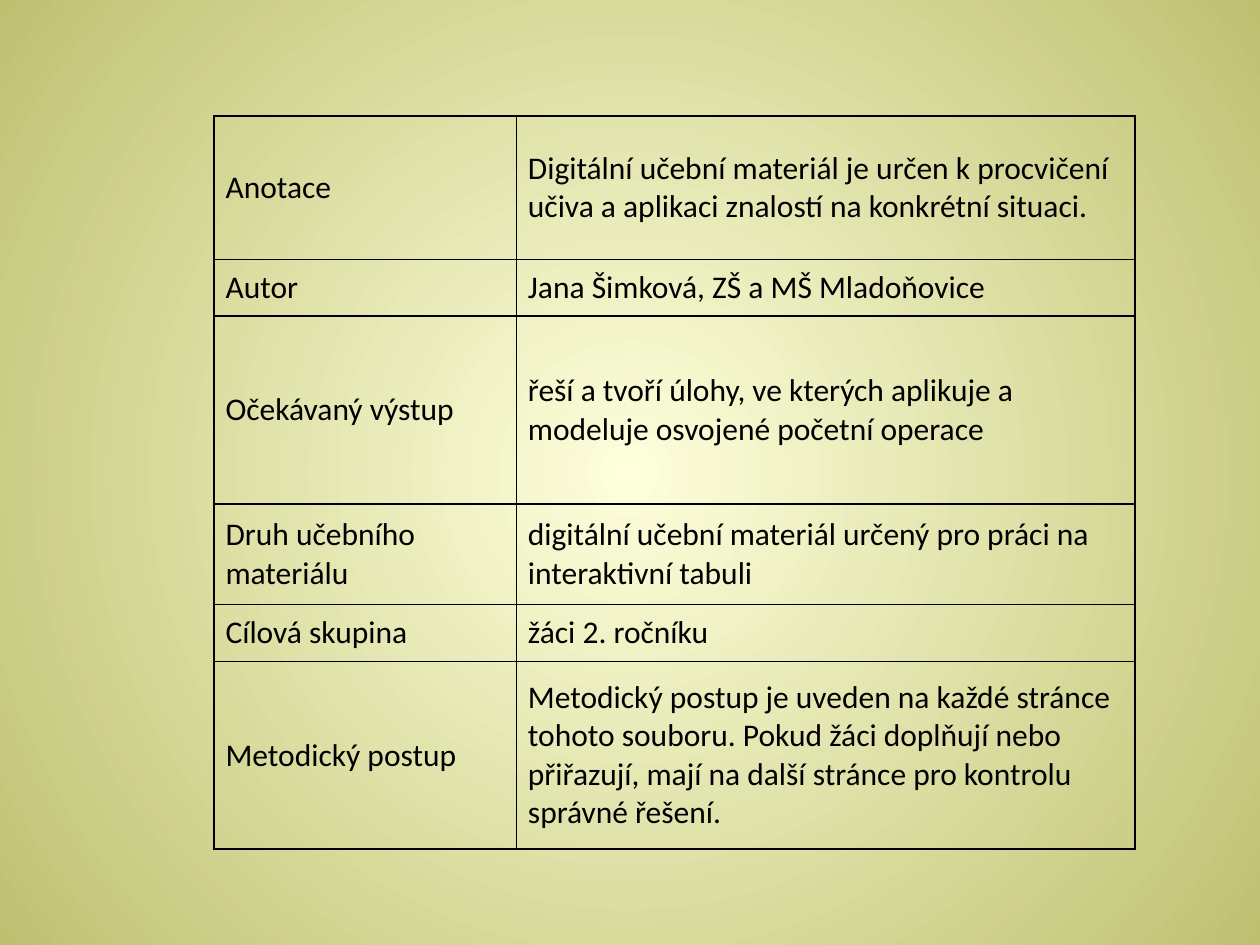
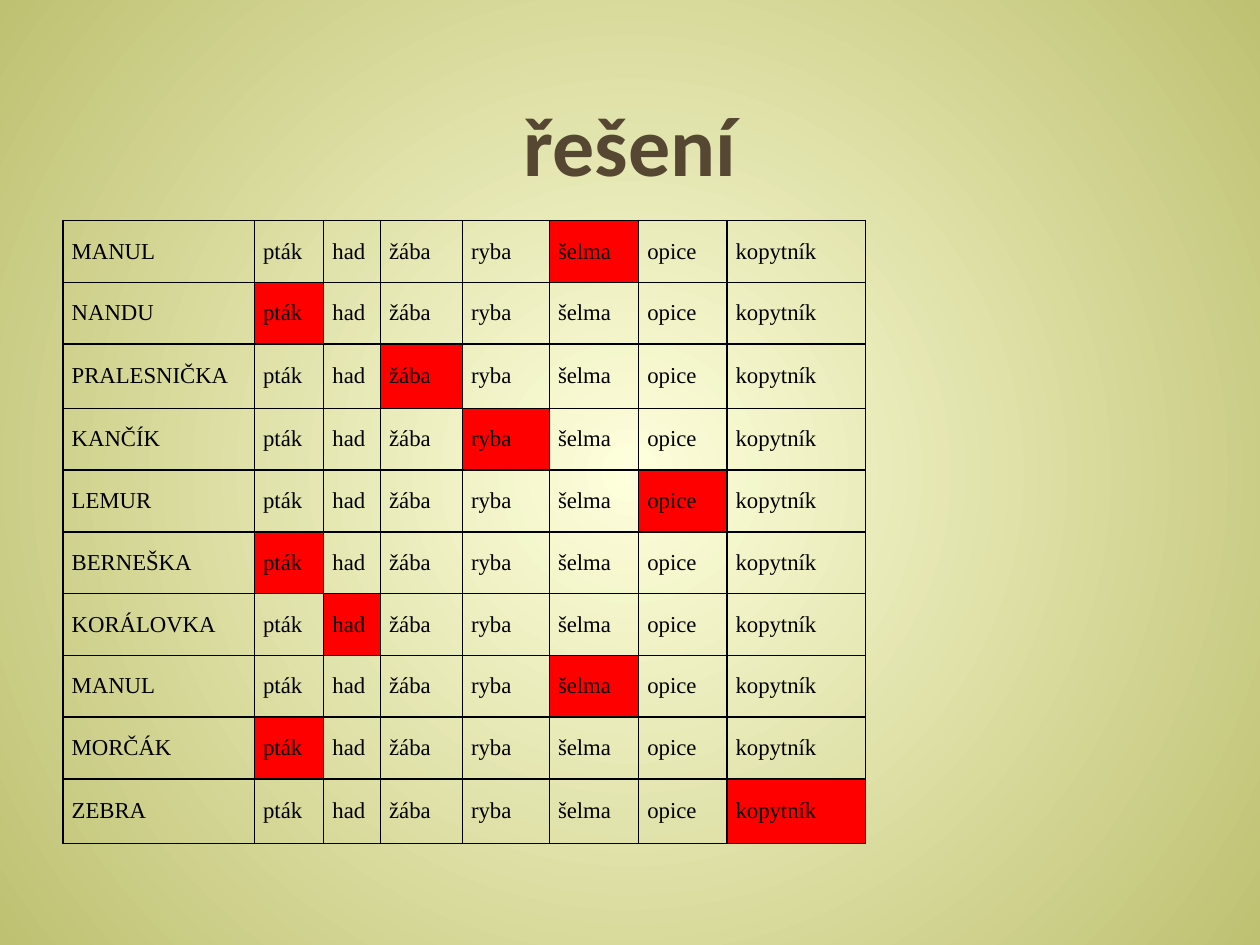
from dataclasses import dataclass

from lxml import etree
from pptx import Presentation
from pptx.dml.color import RGBColor
from pptx.enum.text import MSO_ANCHOR, PP_ALIGN
from pptx.oxml.ns import qn
from pptx.presentation import Presentation as Deck
from pptx.slide import Slide
from pptx.table import _Cell
from pptx.util import Pt

MIDDLE = MSO_ANCHOR.MIDDLE
BOTTOM = MSO_ANCHOR.BOTTOM
CENTER = PP_ALIGN.CENTER

COLORS = {
    "glow": "FEFFDC",
    "edge": "BEC171",
    "title": "564732",
    "text": "000000",
    "border": "000000",
    "answer": "FF0000",
}
TITLE_FONT = "Calibri"
BLANK_LAYOUT = 6
BORDER_WIDTH = Pt(1)


@dataclass(frozen=True)
class Grid:
    """A bordered table; lengths are in points, answers are (row, column) pairs."""
    left: float
    top: float
    columns: list[float]
    rows: list[float]
    texts: list[list[str]]
    font: str
    size: float
    side_margin: float
    end_margin: float
    answers: frozenset[tuple[int, int]] = frozenset()


ABOUT = [
    ["Anotace", "Digitální učební materiál je určen k procvičení "
                "učiva a aplikaci znalostí na konkrétní situaci."],
    ["Autor", "Jana Šimková, ZŠ a MŠ Mladoňovice"],
    ["Očekávaný výstup", "řeší a tvoří úlohy, ve kterých aplikuje a "
                         "modeluje osvojené početní operace"],
    ["Druh učebního materiálu", "digitální učební materiál určený pro práci na "
                                "interaktivní tabuli"],
    ["Cílová skupina", "žáci 2. ročníku"],
    ["Metodický postup", "Metodický postup je uveden na každé stránce tohoto "
                         "souboru. Pokud žáci doplňují nebo přiřazují, mají na "
                         "další stránce pro kontrolu správné řešení."],
]
GROUPS = ["pták", "had", "žába", "ryba", "šelma", "opice", "kopytník"]
ANIMALS = [
    ("MANUL", "šelma"), ("NANDU", "pták"), ("PRALESNIČKA", "žába"),
    ("KANČÍK", "ryba"), ("LEMUR", "opice"), ("BERNEŠKA", "pták"),
    ("KORÁLOVKA", "had"), ("MANUL", "šelma"), ("MORČÁK", "pták"),
    ("ZEBRA", "kopytník"),
]

ABOUT_GRID = Grid(
    left=122.4, top=66.2,
    columns=[172.8, 353.5],
    rows=[82.1, 32.4, 107.3, 57.6, 32.4, 107.3],
    texts=ABOUT, font="Calibri", size=18, side_margin=6.5, end_margin=3,
)
SOLUTION_GRID = Grid(
    left=36, top=126,
    columns=[109.4, 39.6, 32.4, 46.8, 49.7, 51.1, 50.4, 79.2],
    rows=[36.8 if name in ("PRALESNIČKA", "ZEBRA") else 35.3 for name, _ in ANIMALS],
    texts=[[name, *GROUPS] for name, _ in ANIMALS],
    font="Times New Roman", size=13, side_margin=5, end_margin=0,
    answers=frozenset((row, GROUPS.index(group) + 1)
                      for row, (_, group) in enumerate(ANIMALS)),
)


def rgb(name: str) -> RGBColor:
    return RGBColor.from_string(COLORS[name])


def set_background(deck: Deck) -> None:
    """Give the master a round gradient that all slides inherit."""
    master = deck.slide_master
    fill = master.background.fill
    fill.gradient()
    for stop, name in zip(fill.gradient_stops, ("glow", "edge")):
        stop.color.rgb = rgb(name)
    gradient = master.element.find(".//" + qn("a:gradFill"))
    linear = gradient.find(qn("a:lin"))
    circle = etree.Element(qn("a:path"), {"path": "circle"})
    etree.SubElement(circle, qn("a:fillToRect"), dict.fromkeys("ltrb", "50000"))
    gradient.replace(linear, circle)


def add_borders(cell: _Cell) -> None:
    properties = cell._tc.get_or_add_tcPr()
    for index, side in enumerate("LRTB"):
        line = etree.Element(qn(f"a:ln{side}"), {"w": str(BORDER_WIDTH)})
        solid = etree.SubElement(line, qn("a:solidFill"))
        etree.SubElement(solid, qn("a:srgbClr"), {"val": COLORS["border"]})
        properties.insert(index, line)


def fill_cell(cell: _Cell, text: str, grid: Grid, is_answer: bool) -> None:
    add_borders(cell)
    if is_answer:
        cell.fill.solid()
        cell.fill.fore_color.rgb = rgb("answer")
    else:
        cell.fill.background()
    cell.vertical_anchor = MIDDLE
    cell.margin_left = cell.margin_right = Pt(grid.side_margin)
    cell.margin_top = cell.margin_bottom = Pt(grid.end_margin)
    cell.text = text
    font = cell.text_frame.paragraphs[0].font
    font.name, font.size = grid.font, Pt(grid.size)
    font.color.rgb = rgb("text")


def add_grid(page: Slide, grid: Grid) -> None:
    table = page.shapes.add_table(
        len(grid.rows), len(grid.columns), Pt(grid.left), Pt(grid.top),
        Pt(sum(grid.columns)), Pt(sum(grid.rows))).table
    table.first_row = table.horz_banding = False
    for column, width in zip(table.columns, grid.columns):
        column.width = Pt(width)
    for row, height in zip(table.rows, grid.rows):
        row.height = Pt(height)
    for row, texts in enumerate(grid.texts):
        for column, text in enumerate(texts):
            fill_cell(table.cell(row, column), text, grid, (row, column) in grid.answers)


def add_title(page: Slide, text: str) -> None:
    box = page.shapes.add_textbox(Pt(36), Pt(23.8), Pt(648), Pt(90))
    frame = box.text_frame
    frame.word_wrap = True
    frame.vertical_anchor = BOTTOM
    para = frame.paragraphs[0]
    para.text = text
    para.alignment = CENTER
    para.font.name, para.font.size, para.font.bold = TITLE_FONT, Pt(48), True
    para.font.color.rgb = rgb("title")


def main() -> None:
    deck = Presentation()
    deck.slide_width, deck.slide_height = Pt(720), Pt(540)
    set_background(deck)
    blank = deck.slide_layouts[BLANK_LAYOUT]

    about = deck.slides.add_slide(blank)
    add_grid(about, ABOUT_GRID)

    solution = deck.slides.add_slide(blank)
    add_title(solution, "řešení")
    add_grid(solution, SOLUTION_GRID)

    deck.save("out.pptx")


if __name__ == "__main__":
    main()
